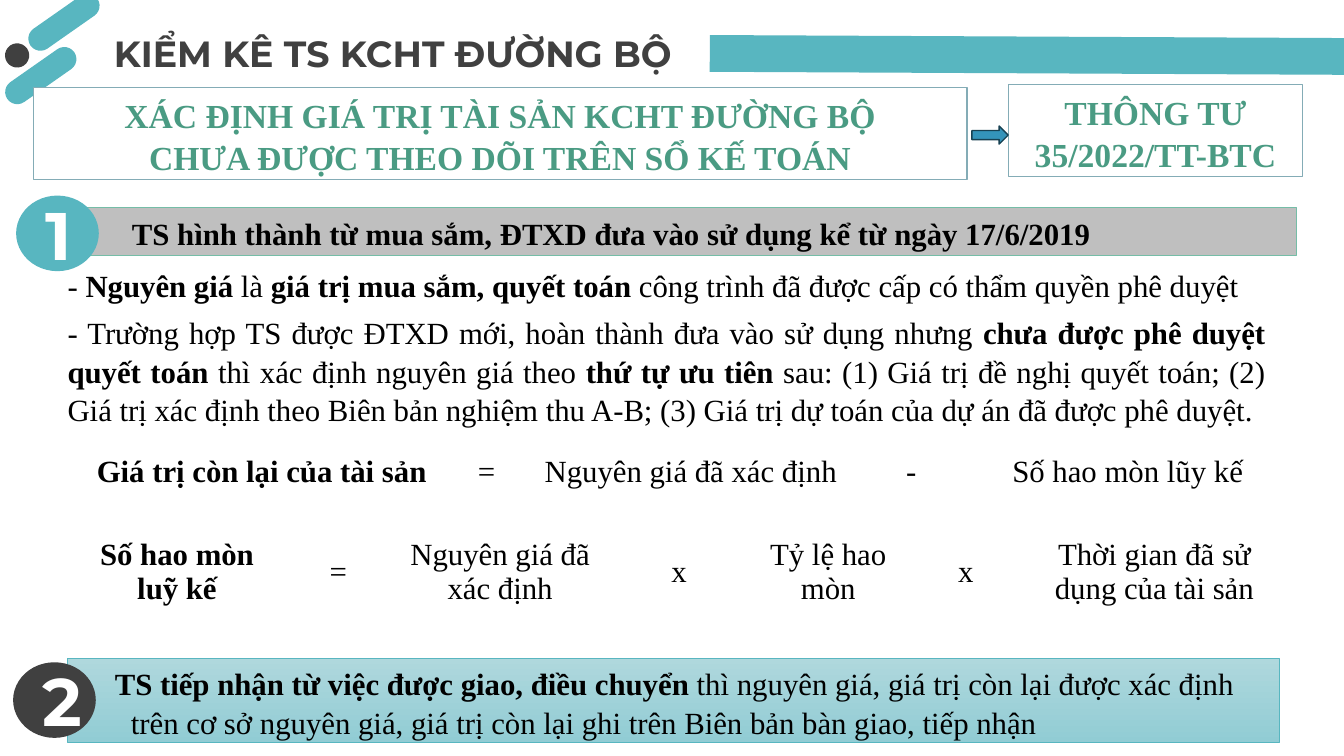
import pptx
import pptx.util
import pptx.dml.color
import pptx.enum.shapes
import pptx.enum.text
import pptx.oxml.ns
import lxml.etree

PX = 9144  # 100 px to the inch
SERIF, SANS = "Times New Roman", "Montserrat"
COLORS = {"teal": "58B6C0", "dark": "404040", "white": "FFFFFF", "black": "000000",
          "green": "4A9B83", "frame": "84ACB6", "gray": "BFBFBF", "mint": "75BDA7",
          "blue": "3494BA", "navy": "174152", "light": "AFD8DD", "deep": "91CCD4"}
RGB = {name: pptx.dml.color.RGBColor.from_string(c) for name, c in COLORS.items()}
SHAPE = pptx.enum.shapes.MSO_SHAPE
ALIGN = pptx.enum.text.PP_ALIGN
ANCHOR = pptx.enum.text.MSO_ANCHOR


def write(tf, text, font=SERIF, size=22, color="black", align=ALIGN.CENTER,
          anchor=ANCHOR.TOP, spacing=1.05, before=0, indents=(0, 0), margins=(10, 5)):
    """One paragraph per line of text; ** switches bold on and off."""
    tf.word_wrap = True
    tf.auto_size = pptx.enum.text.MSO_AUTO_SIZE.NONE
    tf.vertical_anchor = anchor
    tf.margin_left = tf.margin_right = margins[0] * PX
    tf.margin_top = tf.margin_bottom = margins[1] * PX
    for i, line in enumerate(text.split("\n")):
        p = tf.paragraphs[0] if i == 0 else tf.add_paragraph()
        pPr = p._p.get_or_add_pPr()
        pPr.set("marL", str(indents[i] * PX))
        pPr.set("indent", "0")
        lxml.etree.SubElement(pPr, pptx.oxml.ns.qn("a:buNone"))
        p.alignment = align
        p.line_spacing = spacing
        p.space_before = pptx.util.Pt(before if i else 0)
        p.space_after = pptx.util.Pt(0)
        for j, part in enumerate(line.split("**")):
            if part:
                r = p.add_run()
                r.text = part
                r.font.name = font
                r.font.size = pptx.util.Pt(size)
                r.font.bold = j % 2 == 1
                r.font.color.rgb = RGB[color]


def add_box(kind, x, y, w, h, fill, line=None, width=1):
    sp = s.shapes.add_shape(kind, x * PX, y * PX, w * PX, h * PX)
    sp.shadow.inherit = False
    sp.fill.solid()
    sp.fill.fore_color.rgb = RGB[fill]
    if line:
        sp.line.color.rgb = RGB[line]
        sp.line.width = pptx.util.Pt(width)
    else:
        sp.line.fill.background()
    return sp


prs = pptx.Presentation()
prs.slide_width, prs.slide_height = 1333 * PX, 750 * PX
s = prs.slides.add_slide(prs.slide_layouts[1])
title, body = s.placeholders

# Title and explanation
for sp, (x, y, w, h) in ((title, (103, 26, 600, 54)), (body, (57, 260, 1208, 167))):
    sp.left, sp.top, sp.width, sp.height = x * PX, y * PX, w * PX, h * PX
write(title.text_frame, "**KIỂM KÊ TS KCHT ĐƯỜNG BỘ**", font=SANS, size=26,
      color="dark", align=ALIGN.LEFT, spacing=1.0)
write(body.text_frame,
      "- **Nguyên giá** là **giá trị mua sắm, quyết toán** công trình đã được cấp có thẩm quyền phê duyệt\n"
      "- Trường hợp TS được ĐTXD mới, hoàn thành đưa vào sử dụng nhưng **chưa được phê duyệt quyết toán** "
      "thì xác định nguyên giá theo **thứ tự ưu tiên** sau: (1) Giá trị đề nghị quyết toán; "
      "(2) Giá trị xác định theo Biên bản nghiệm thu A-B; (3) Giá trị dự toán của dự án đã được phê duyệt.",
      align=ALIGN.JUSTIFY, anchor=ANCHOR.MIDDLE, before=6)

# Corner decoration and title bar
for x, y, w, color in ((23, 10, 81, "teal"), (0, 63, 81, "teal"), (5, 43, 24, "dark")):
    sp = add_box(SHAPE.ROUNDED_RECTANGLE, x, y, w, 24, color)
    sp.adjustments[0] = 0.5
    sp.rotation = 325
bar = s.shapes.add_connector(pptx.enum.shapes.MSO_CONNECTOR.STRAIGHT,
                             704 * PX, 53 * PX, 1333 * PX, 56 * PX)
bar.line.color.rgb = RGB["teal"]
bar.line.width = pptx.util.Pt(26.25)
lxml.etree.SubElement(bar._element.spPr, pptx.oxml.ns.qn("a:effectLst"))

# Subject, arrow and circular
for x, y, w, text in (
        (33, 87, 926, "**XÁC ĐỊNH GIÁ TRỊ TÀI SẢN KCHT ĐƯỜNG BỘ**\n**CHƯA ĐƯỢC THEO DÕI TRÊN SỔ KẾ TOÁN**"),
        (1000, 84, 292, "**THÔNG TƯ 35/2022/TT-BTC**")):
    sp = add_box(SHAPE.RECTANGLE, x, y, w, 91, "white", "frame")
    write(sp.text_frame, text, size=24, color="green")
add_box(SHAPE.RIGHT_ARROW, 964, 125, 36, 18, "blue", "navy")

# Banners of the two cases
sp = add_box(SHAPE.RECTANGLE, 84, 206, 1202, 47, "gray", "mint", 0.5)
write(sp.text_frame, "**TS hình thành từ mua sắm, ĐTXD đưa vào sử dụng kể từ ngày 17/6/2019**",
      align=ALIGN.JUSTIFY, indents=(37,))
sp = add_box(SHAPE.RECTANGLE, 67, 653, 1202, 84, "light", "teal", 0.5)
sp.fill.gradient()
sp.fill.gradient_angle = 270
for stop, color in zip(sp.fill.gradient_stops, ("light", "deep")):
    stop.color.rgb = RGB[color]
write(sp.text_frame,
      "**TS tiếp nhận từ việc được giao, điều chuyển** thì nguyên giá, giá trị còn lại được xác định\n"
      "trên cơ sở nguyên giá, giá trị còn lại ghi trên Biên bản bàn giao, tiếp nhận",
      align=ALIGN.JUSTIFY, indents=(37, 53))

# Formulas
formulas = (
    (76, 437, 63, (0, 0), (367, 79, 326, 112, 317),
     ("**Giá trị còn lại của tài sản**", "=", "Nguyên giá đã xác định", "-", "Số hao mòn lũy kế")),
    (72, 526, 83, (10, 5), (207, 113, 208, 147, 149, 124, 250),
     ("**Số hao mòn luỹ kế**", "=", "Nguyên giá đã xác định", "x", "Tỷ lệ hao mòn", "x",
      "Thời gian đã sử dụng của tài sản")))
for x, y, h, margins, widths, terms in formulas:
    table = s.shapes.add_table(1, len(terms), x * PX, y * PX, sum(widths) * PX, h * PX).table
    table.first_row = table.horz_banding = False
    for column, cell, width, term in zip(table.columns, table.rows[0].cells, widths, terms):
        column.width = width * PX
        cell.fill.background()
        write(cell.text_frame, term, spacing=1.0)
        cell.vertical_anchor = ANCHOR.MIDDLE
        cell.margin_left = cell.margin_right = margins[0] * PX
        cell.margin_top = cell.margin_bottom = margins[1] * PX

# Case numbers
for x, y, color, number in ((16, 194, "teal", "1"), (13, 657, "dark", "2")):
    sp = add_box(SHAPE.OVAL, x, y, 82, 75, color)
    write(sp.text_frame, f"**{number}**", font=SANS, size=48, color="white",
          anchor=ANCHOR.MIDDLE, spacing=1.0, margins=(17, 9))

prs.save("out.pptx")
